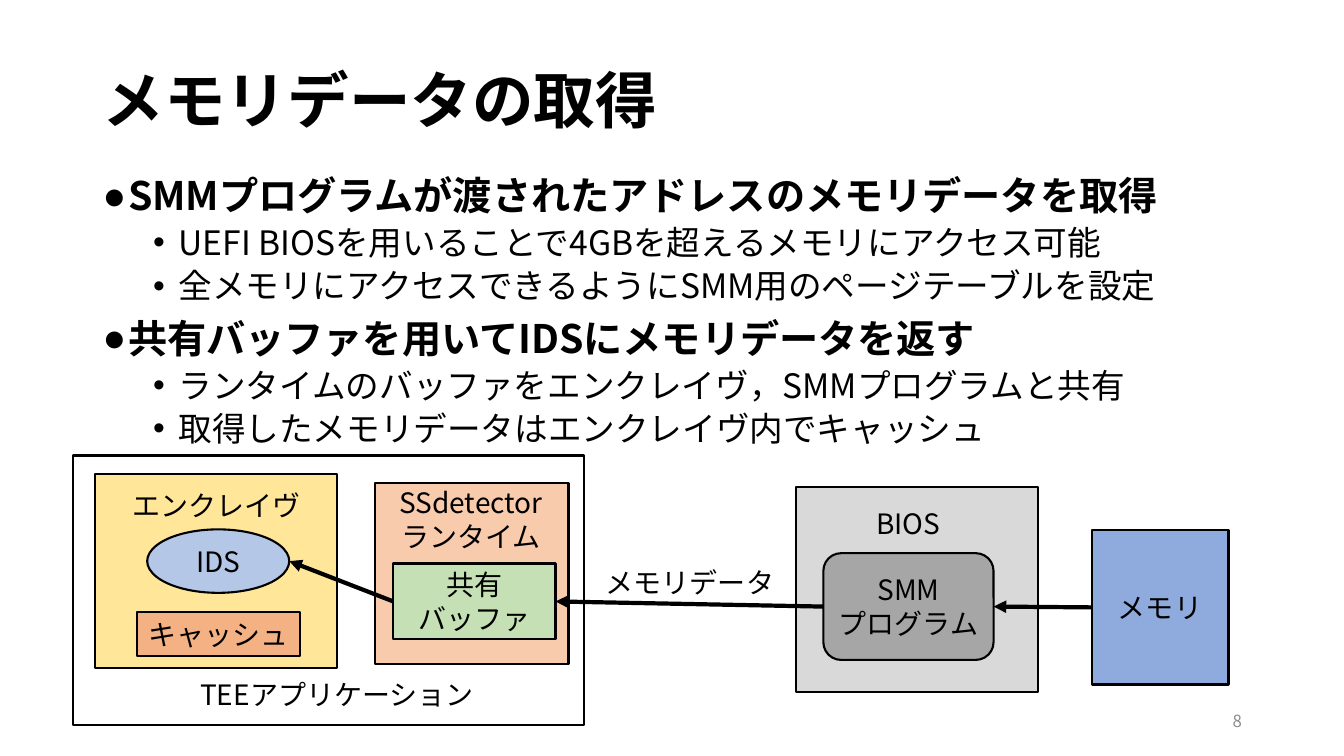
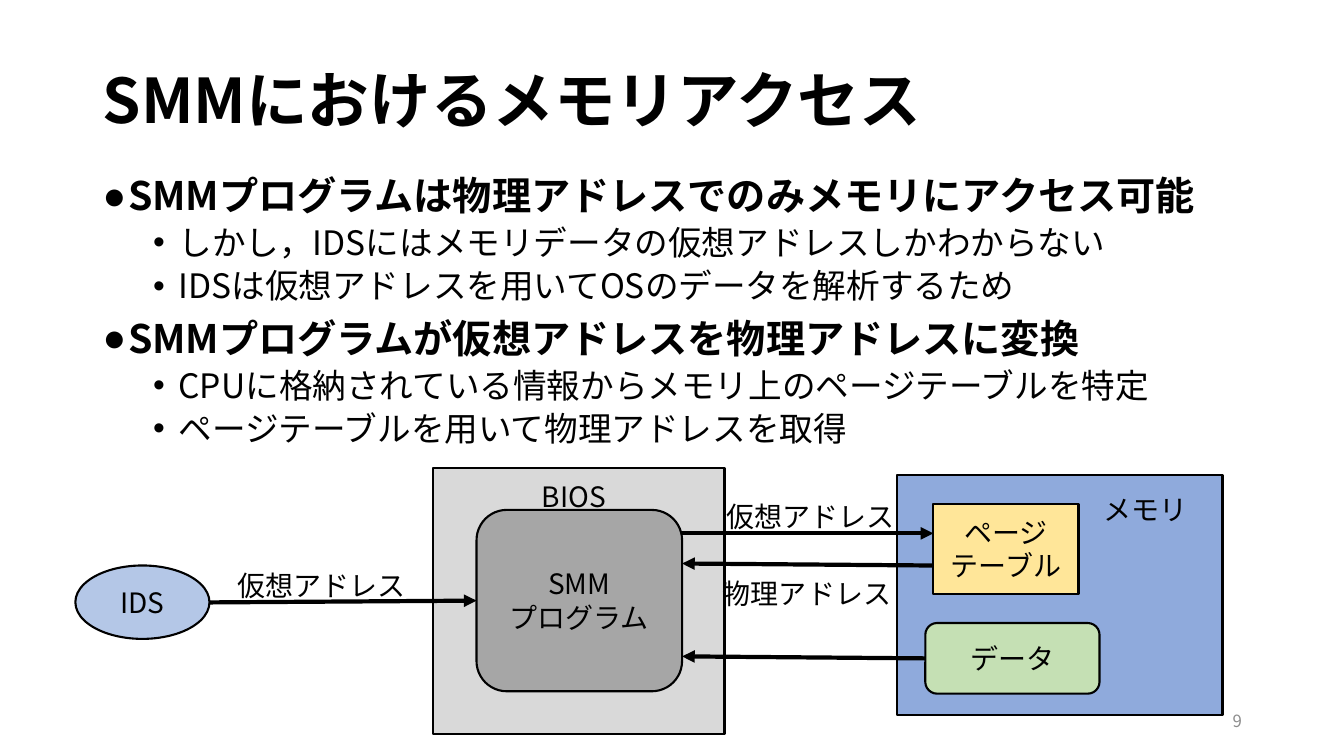
from lxml import etree
from pptx import Presentation
from pptx.dml.color import RGBColor
from pptx.enum.lang import MSO_LANGUAGE_ID
from pptx.enum.shapes import MSO_CONNECTOR, MSO_SHAPE
from pptx.enum.text import MSO_ANCHOR, PP_ALIGN
from pptx.oxml.ns import qn
from pptx.util import Cm, Pt

RECT, ROUND, OVAL = MSO_SHAPE.RECTANGLE, MSO_SHAPE.ROUNDED_RECTANGLE, MSO_SHAPE.OVAL
STRAIGHT = MSO_CONNECTOR.STRAIGHT
TOP, MIDDLE = MSO_ANCHOR.TOP, MSO_ANCHOR.MIDDLE
LEFT, CENTER, RIGHT = PP_ALIGN.LEFT, PP_ALIGN.CENTER, PP_ALIGN.RIGHT
JAPANESE = MSO_LANGUAGE_ID.JAPANESE
WEST, EAST = 1, 3  # connection sites of a rectangle

FONT, BULLET_FONT = "Noto Sans CJK JP", "Arial"
COLORS = {
    "ink": "000000", "number": "8C8C8C", "bios": "D9D9D9", "smm": "A6A6A6",
    "memory": "8FAADC", "yellow": "FFE699", "ids": "B4C7E7",
    "runtime": "F8CBAD", "cache": "F4B183", "green": "C5E0B4",
}

# Positions are in centimetres: left, top, width, height
TITLE_BOX = (2.34, 1.42, 29.21, 2.36)
BODY_BOX = (2.34, 4.33, 29.21, 12.09)
NUMBER_BOX = (23.93, 17.65, 7.62, 1.02)
LABEL_HEIGHT, ADDRESS_WIDTH = 1.12, 5.18

# Bullet levels: character, text size, bold, left margin, space before
LEVELS = [("●", 28, True, 0.64, 10), ("•", 24, False, 1.91, 5)]
HANGING = 0.64

# parts: key, shape, colour, box, text
# labels: text, left, top, width
# arrows: from, to; an end is either (part key, site) or a point (x, y)
SLIDES = [
    {
        "number": 8,
        "title": "メモリデータの取得",
        "points": [
            ("SMMプログラムが渡されたアドレスのメモリデータを取得", [
                "UEFI BIOSを用いることで4GBを超えるメモリにアクセス可能",
                "全メモリにアクセスできるようにSMM用のページテーブルを設定"]),
            ("共有バッファを用いてIDSにメモリデータを返す", [
                "ランタイムのバッファをエンクレイヴ，SMMプログラムと共有",
                "取得したメモリデータはエンクレイヴ内でキャッシュ"]),
        ],
        "parts": [
            ("bios", RECT, "bios", (20.07, 12.27, 6.1, 5.18), ""),
            ("smm", ROUND, "smm", (20.75, 13.94, 4.29, 2.69), "SMM\nプログラム"),
            ("memory", RECT, "memory", (27.51, 13.36, 3.45, 3.89), "メモリ"),
            ("application", RECT, None, (1.83, 11.48, 12.9, 6.78), ""),
            ("enclave", RECT, "yellow", (2.39, 11.94, 6.1, 4.9), ""),
            ("ids", OVAL, "ids", (3.71, 13.34, 3.58, 1.6), "IDS"),
            ("cache", RECT, "cache", (3.45, 15.42, 4.11, 1.12), "キャッシュ"),
            ("runtime", RECT, "runtime", (9.45, 12.17, 4.88, 4.57), ""),
            ("buffer", RECT, "green", (9.91, 14.2, 4.09, 1.91), "共有\nバッファ"),
        ],
        "labels": [
            ("メモリデータ", 14.8, 14.12, ADDRESS_WIDTH),
            ("BIOS", 21.56, 12.65, 2.67),
            ("エンクレイヴ", 2.97, 12.19, 4.98),
            ("SSdetectorランタイム", 9.75, 12.12, 4.24),
            ("TEEアプリケーション", 4.62, 16.94, 7.75),
        ],
        "arrows": [
            (("memory", WEST), ("smm", EAST)),
            (("smm", WEST), ("buffer", EAST)),
            (("buffer", WEST), (7.29, 14.14)),
        ],
    },
    {
        "number": 9,
        "title": "SMMにおけるメモリアクセス",
        "points": [
            ("SMMプログラムは物理アドレスでのみメモリにアクセス可能", [
                "しかし，IDSにはメモリデータの仮想アドレスしかわからない",
                "IDSは仮想アドレスを用いてOSのデータを解析するため"]),
            ("SMMプログラムが仮想アドレスを物理アドレスに変換", [
                "CPUに格納されている情報からメモリ上のページテーブルを特定",
                "ページテーブルを用いて物理アドレスを取得"]),
        ],
        "parts": [
            ("bios", RECT, "bios", (10.92, 11.79, 7.34, 6.71), ""),
            ("smm", ROUND, "smm", (12.01, 12.85, 5.18, 4.57), "SMM\nプログラム"),
            ("memory", RECT, "memory", (22.61, 11.96, 8.2, 6.07), ""),
            ("page table", RECT, "yellow", (23.52, 12.7, 3.66, 2.26), "ページテーブル"),
            ("data", ROUND, "green", (23.32, 15.7, 4.39, 1.78), "データ"),
            ("ids", OVAL, "ids", (1.9, 14.25, 3.38, 1.85), "IDS"),
        ],
        "labels": [
            ("メモリ", 26.44, 12.29, 4.85),
            ("BIOS", 12.29, 11.96, 4.34),
            ("仮想アドレス", 5.51, 14.2, ADDRESS_WIDTH),
            ("仮想アドレス", 17.83, 12.47, ADDRESS_WIDTH),
            ("物理アドレス", 17.75, 14.4, ADDRESS_WIDTH),
        ],
        "arrows": [
            ((5.28, 15.18), ("smm", WEST)),
            ((17.19, 13.44), (23.52, 13.44)),
            ((23.52, 14.25), (17.19, 14.2)),
            (("data", WEST), (17.19, 16.54)),
        ],
    },
]


def rgb(name):
    return RGBColor.from_string(COLORS[name])


def write_paragraph(paragraph, text, size=20, bold=False, color="ink",
                    align=CENTER, spacing=None):
    paragraph.alignment = align
    paragraph.line_spacing = spacing
    run = paragraph.add_run()
    run.text = text
    font = run.font
    font.size, font.bold, font.name = Pt(size), bold, FONT
    font.language_id = JAPANESE
    font.color.rgb = rgb(color)
    latin = run._r.rPr.find(qn("a:latin"))
    east_asian = etree.Element(qn("a:ea"), typeface=FONT)
    latin.addnext(east_asian)


def write(shape, text, anchor=MIDDLE, **style):
    """Fill a shape with text, one paragraph a line."""
    frame = shape.text_frame
    frame.word_wrap = True
    frame.vertical_anchor = anchor
    for i, line in enumerate(text.split("\n")):
        paragraph = frame.add_paragraph() if i else frame.paragraphs[0]
        write_paragraph(paragraph, line, **style)


def add_text(slide, box, text, **style):
    write(slide.shapes.add_textbox(*map(Cm, box)), text, **style)


def add_points(slide, points):
    frame = slide.shapes.add_textbox(*map(Cm, BODY_BOX)).text_frame
    frame.word_wrap = True
    lines = [(level, text) for head, details in points
             for level, text in [(0, head)] + [(1, detail) for detail in details]]
    for i, (level, text) in enumerate(lines):
        bullet, size, bold, margin, before = LEVELS[level]
        paragraph = frame.add_paragraph() if i else frame.paragraphs[0]
        paragraph.level = level
        write_paragraph(paragraph, text, size=size, bold=bold, align=LEFT, spacing=0.9)
        paragraph.space_before = Pt(before)
        properties = paragraph._p.get_or_add_pPr()
        properties.set("marL", str(Cm(margin)))
        properties.set("indent", str(-Cm(HANGING)))
        etree.SubElement(properties, qn("a:buFont"), typeface=BULLET_FONT)
        etree.SubElement(properties, qn("a:buChar"), char=bullet)


def add_part(slide, kind, color, box, text):
    part = slide.shapes.add_shape(kind, *map(Cm, box))
    part.shadow.inherit = False
    if color:
        part.fill.solid()
        part.fill.fore_color.rgb = rgb(color)
    else:
        part.fill.background()
    part.line.color.rgb = rgb("ink")
    part.line.width = Pt(1.5)
    if text:
        write(part, text)
    return part


def add_arrow(slide, parts, start, end):
    arrow = slide.shapes.add_connector(STRAIGHT, 0, 0, 0, 0)
    # Free ends are placed before joined ones
    if start[0] not in parts:
        arrow.begin_x, arrow.begin_y = map(Cm, start)
    if end[0] not in parts:
        arrow.end_x, arrow.end_y = map(Cm, end)
    if start[0] in parts:
        arrow.begin_connect(parts[start[0]], start[1])
    if end[0] in parts:
        arrow.end_connect(parts[end[0]], end[1])
    arrow.line.color.rgb = rgb("ink")
    arrow.line.width = Pt(3)
    etree.SubElement(arrow.line._get_or_add_ln(), qn("a:tailEnd"), type="triangle")
    etree.SubElement(arrow._element.spPr, qn("a:effectLst"))


def build_slide(prs, content):
    slide = prs.slides.add_slide(prs.slide_layouts[6])
    add_text(slide, TITLE_BOX, content["title"], size=44, bold=True,
             align=LEFT, spacing=0.9)
    add_points(slide, content["points"])
    parts = {key: add_part(slide, *rest) for key, *rest in content["parts"]}
    for text, left, top, width in content["labels"]:
        add_text(slide, (left, top, width, LABEL_HEIGHT), text, anchor=TOP)
    for start, end in content["arrows"]:
        add_arrow(slide, parts, start, end)
    add_text(slide, NUMBER_BOX, str(content["number"]), size=12,
             color="number", align=RIGHT)


def main():
    prs = Presentation()
    prs.slide_width, prs.slide_height = Cm(33.87), Cm(19.05)
    for content in SLIDES:
        build_slide(prs, content)
    prs.save("out.pptx")


if __name__ == "__main__":
    main()
